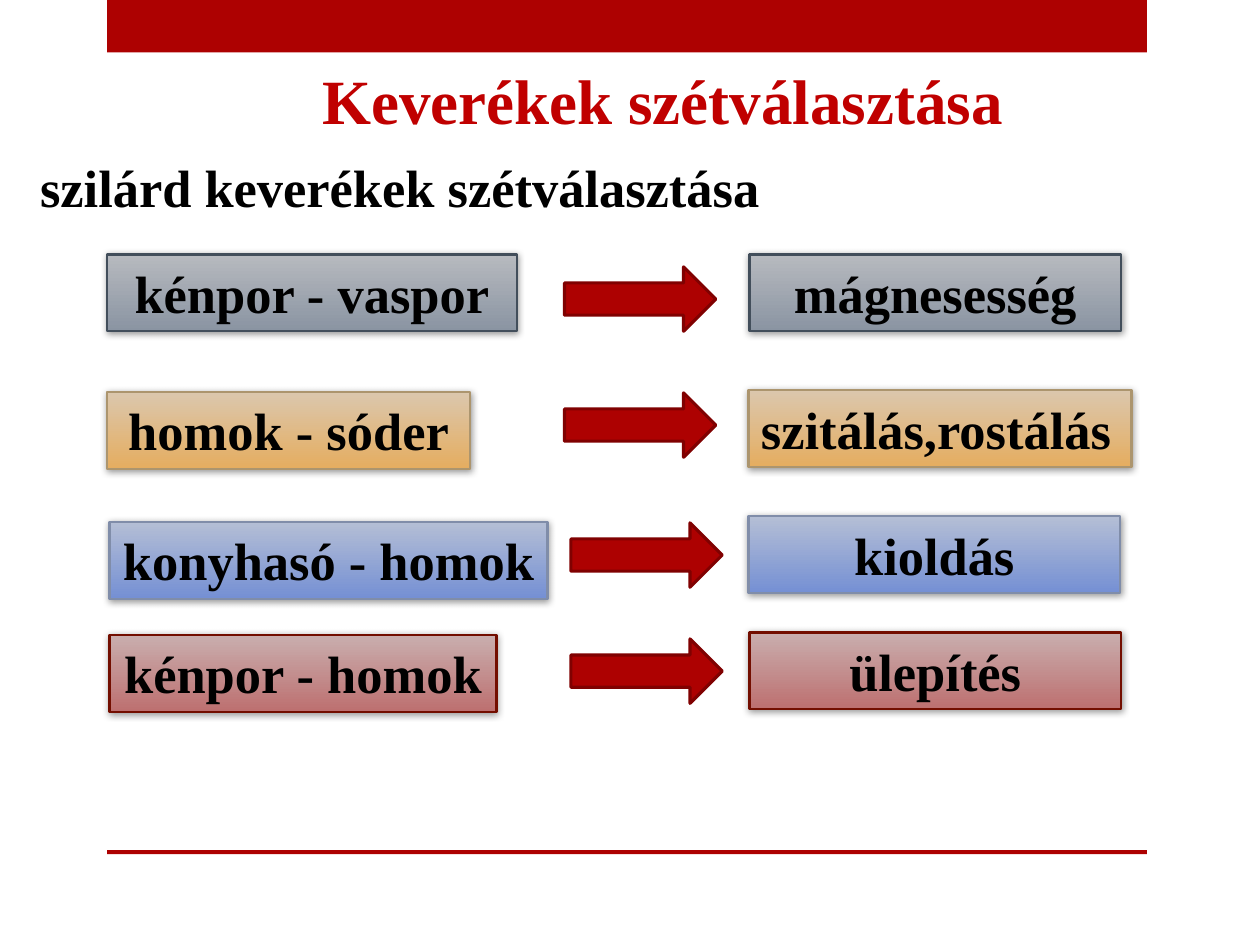
from dataclasses import dataclass

from lxml import etree
from pptx import Presentation
from pptx.dml.color import RGBColor
from pptx.enum.shapes import MSO_SHAPE
from pptx.enum.text import MSO_ANCHOR, MSO_AUTO_SIZE, PP_ALIGN
from pptx.oxml.ns import qn
from pptx.util import Cm, Pt

RECTANGLE, RIGHT_ARROW = MSO_SHAPE.RECTANGLE, MSO_SHAPE.RIGHT_ARROW
LEFT, CENTER = PP_ALIGN.LEFT, PP_ALIGN.CENTER
TOP = MSO_ANCHOR.TOP
GROW = MSO_AUTO_SIZE.SHAPE_TO_FIT_TEXT


@dataclass(frozen=True)
class Theme:
    font: str = "Times New Roman"
    title_size: int = 36
    body_size: int = 30
    title: str = "C00000"
    text: str = "000000"
    accent: str = "AD0101"
    arrow_line: str = "800101"
    # Gradient top, gradient bottom, outline
    gray: tuple = ("B7BABF", "8A94A2", "424E5B")
    sand: tuple = ("DBC7AD", "E5AD60", "AC956E")
    blue: tuple = ("B4BED5", "7590D4", "808DA9")
    red: tuple = ("C9AEAE", "BD7070", "730E00")


theme = Theme()
rgb = RGBColor.from_string


def write(shape, text, size, color, align):
    frame = shape.text_frame
    frame.word_wrap = True
    frame.auto_size = GROW
    frame.vertical_anchor = TOP
    paragraph = frame.paragraphs[0]
    paragraph.alignment = align
    run = paragraph.add_run()
    run.text = text
    run.font.name = theme.font
    run.font.size = Pt(size)
    run.font.bold = True
    run.font.color.rgb = rgb(color)


def add_solid(kind, left, top, width, height):
    shape = slide.shapes.add_shape(kind, Cm(left), Cm(top), Cm(width), Cm(height))
    shape.shadow.inherit = False
    shape.fill.solid()
    shape.fill.fore_color.rgb = rgb(theme.accent)
    shape.line.fill.background()
    return shape


prs = Presentation()
prs.slide_width, prs.slide_height = Cm(25.4), Cm(19.05)
slide = prs.slides.add_slide(prs.slide_layouts[5])

# Top band and bottom rule
for band_top, band_height in ((0, 1.06), (17.14, 0.08)):
    add_solid(RECTANGLE, 2.16, band_top, 20.96, band_height)

# Title and subtitle
title = slide.shapes.title
title.left, title.top, title.width, title.height = Cm(6.25), Cm(1.12), Cm(14.43), Cm(1.8)
write(title, "Keverékek szétválasztása", theme.title_size, theme.title, LEFT)

subtitle = slide.shapes.add_textbox(Cm(0.56), Cm(3), Cm(15.21), Cm(1.55))
write(subtitle, "szilárd keverékek szétválasztása", theme.body_size, theme.text, LEFT)

# Each row: colours, mixture box, method box (text, left, top, width, alignment), arrow corner
rows = (
    (theme.gray, ("kénpor - vaspor", 2.16, 5.13, 8.26, CENTER),
     ("mágnesesség", 15.11, 5.13, 7.49, CENTER), (11.38, 5.38)),
    (theme.sand, ("homok - sóder", 2.16, 7.9, 7.32, CENTER),
     ("szitálás,rostálás", 15.09, 7.87, 7.72, LEFT), (11.38, 7.92)),
    (theme.blue, ("konyhasó - homok", 2.21, 10.52, 8.83, CENTER),
     ("kioldás", 15.09, 10.41, 7.49, CENTER), (11.51, 10.54)),
    (theme.red, ("kénpor - homok", 2.21, 12.8, 7.8, CENTER),
     ("ülepítés", 15.11, 12.75, 7.49, CENTER), (11.51, 12.88)),
)

for (light, dark, outline), mixture, method, (arrow_left, arrow_top) in rows:
    # Mixture and its separation method
    for text, left, top, width, align in (mixture, method):
        box = slide.shapes.add_shape(RECTANGLE, Cm(left), Cm(top), Cm(width), Cm(1.55))
        box.fill.gradient()
        box.fill.gradient_angle = 270
        for stop, color, position in zip(box.fill.gradient_stops, (light, dark), (0, 1)):
            stop.color.rgb = rgb(color)
            stop.position = position
        box.line.color.rgb = rgb(outline)
        box.line.width = Pt(1.25)

        # Soft shadow below the box
        box.shadow.inherit = False
        effects = box._element.spPr.find(qn("a:effectLst"))
        shadow = etree.SubElement(effects, qn("a:outerShdw"), blurRad=str(Pt(4)),
                                  dist=str(Pt(1)), dir=str(88 * 60000), rotWithShape="0")
        shade = etree.SubElement(shadow, qn("a:srgbClr"), val=theme.text)
        etree.SubElement(shade, qn("a:alpha"), val="40000")
        write(box, text, theme.body_size, theme.text, align)

    # Arrow from mixture to method
    arrow = add_solid(RIGHT_ARROW, arrow_left, arrow_top, 3.05, 1.3)
    arrow.line.color.rgb = rgb(theme.arrow_line)
    arrow.line.width = Pt(1.75)

prs.save("out.pptx")
